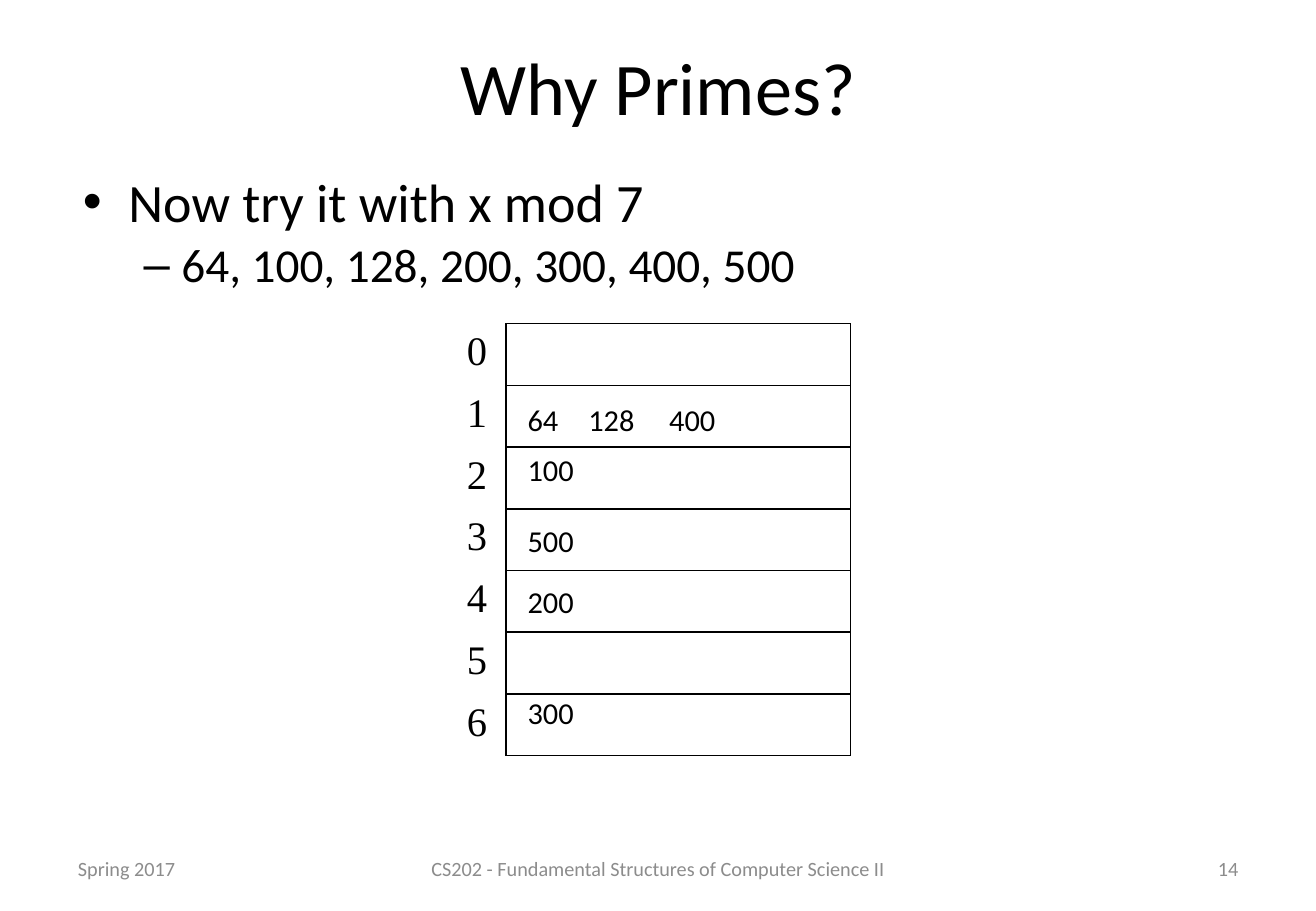
import pptx
import pptx.dml.color
import pptx.enum.text
import pptx.oxml
import pptx.oxml.ns
import pptx.util
from pptx.util import Cm

ALIGN = pptx.enum.text.PP_ALIGN
ANCHOR = pptx.enum.text.MSO_ANCHOR
BLACK, GRAY = "000000", "8C8C8C"
TABLE_LEFT, TABLE_TOP, ROW_HEIGHT = 9.51, 6.77, 1.29
LABEL_WIDTH, BUCKET_WIDTH = 1.07, 7.2
BUCKET_COUNT = 7
KEY_WIDTH, KEY_HEIGHT = 1.6, 1.02
FIRST_KEY = 10.78
# key, left and top in cm
KEYS = [
    ("64", FIRST_KEY, 8.26), ("128", 12.05, 8.26), ("400", 13.74, 8.26),
    ("100", FIRST_KEY, 9.31), ("500", FIRST_KEY, 10.8),
    ("200", FIRST_KEY, 12.07), ("300", FIRST_KEY, 14.39),
]
FOOTERS = [
    ("Spring 2017", 1.38, 6.42, ALIGN.LEFT),
    ("CS202 - Fundamental Structures of Computer Science II", 8.68, 10.16, ALIGN.CENTER),
    ("14", 19.72, 6.42, ALIGN.RIGHT),
]
# text, level, size, space before in points, bullet, margin and hanging indent in cm
BULLETS = [
    ("Now try it with x mod 7", 0, 32, None, "•", 0.95, -0.95),
    ("64, 100, 128, 200, 300, 400, 500", 1, 28, pptx.util.Pt(1.5), "–", 2.06, -0.79),
]


def color(hex_string):
    return pptx.dml.color.RGBColor.from_string(hex_string)


def set_values(target, values):
    for name, value in values.items():
        setattr(target, name, value)


def place(shape, left, top, width, height):
    set_values(shape, {"left": Cm(left), "top": Cm(top),
                       "width": Cm(width), "height": Cm(height)})


def write(para, text, size, align=ALIGN.LEFT, font="Calibri", hex_string=BLACK):
    para.alignment = align
    span = para.add_run()
    span.text = text
    set_values(span.font, {"size": pptx.util.Pt(size), "name": font})
    span.font.color.rgb = color(hex_string)


def add_text(page, text, area, size, align=ALIGN.LEFT, hex_string=BLACK):
    box = page.shapes.add_textbox(*map(Cm, area))
    set_values(box.text_frame, {"word_wrap": True, "vertical_anchor": ANCHOR.MIDDLE})
    write(box.text_frame.paragraphs[0], text, size, align, hex_string=hex_string)


def set_bullet(para, bullet, margin, indent):
    properties = para._p.get_or_add_pPr()
    properties.set("marL", str(Cm(margin)))
    properties.set("indent", str(Cm(indent)))
    mark = pptx.oxml.parse_xml(
        f'<a:buChar {pptx.oxml.ns.nsdecls("a")} char="{bullet}"/>')
    properties.append(mark)


def set_borders(cell, black_sides):
    """Draw the given sides (letters of LRTB) in black and clear the others."""
    for side in "LRTB":
        paint = (f'<a:solidFill><a:srgbClr val="{BLACK}"/></a:solidFill>'
                 if side in black_sides else "<a:noFill/>")
        cell._tc.get_or_add_tcPr().append(pptx.oxml.parse_xml(
            f'<a:ln{side} {pptx.oxml.ns.nsdecls("a")} w="12700">{paint}</a:ln{side}>'))
    cell.fill.background()


def add_hash_table(page):
    area = (TABLE_LEFT, TABLE_TOP, LABEL_WIDTH + BUCKET_WIDTH, BUCKET_COUNT * ROW_HEIGHT)
    table = page.shapes.add_table(BUCKET_COUNT, 2, *map(Cm, area)).table
    set_values(table, {"first_row": False, "horz_banding": False})
    for column, width in zip(table.columns, (LABEL_WIDTH, BUCKET_WIDTH)):
        column.width = Cm(width)
    for index, row in enumerate(table.rows):
        row.height = Cm(ROW_HEIGHT)
        label, bucket = row.cells
        set_values(label, {"margin_left": Cm(0.15), "margin_right": Cm(0.3)})
        write(label.text_frame.paragraphs[0], str(index), 24,
              ALIGN.CENTER, "Times New Roman")
        set_borders(label, "R")
        set_borders(bucket, "LRTB")


def fill_placeholders(page):
    title, body = page.placeholders
    place(title, 1.38, 0.62, 24.77, 2.33)
    title.text_frame.vertical_anchor = ANCHOR.MIDDLE
    write(title.text_frame.paragraphs[0], "Why Primes?", 44, ALIGN.CENTER)
    place(body, 1.48, 3.39, 24.77, 3.18)
    frame = body.text_frame
    for index, (text, level, size, space, *bullet) in enumerate(BULLETS):
        para = frame.add_paragraph() if index else frame.paragraphs[0]
        set_values(para, {"level": level, "space_before": space})
        write(para, text, size)
        set_bullet(para, *bullet)


def main():
    deck = pptx.Presentation()
    set_values(deck, {"slide_width": Cm(27.51), "slide_height": Cm(19.05)})
    page = deck.slides.add_slide(deck.slide_layouts[1])
    fill_placeholders(page)
    for text, left, width, align in FOOTERS:
        add_text(page, text, (left, 17.66, width, 1.01), 12, align, GRAY)
    add_hash_table(page)
    for key, left, top in KEYS:
        add_text(page, key, (left, top, KEY_WIDTH, KEY_HEIGHT), 18)
    deck.save("out.pptx")


if __name__ == "__main__":
    main()
